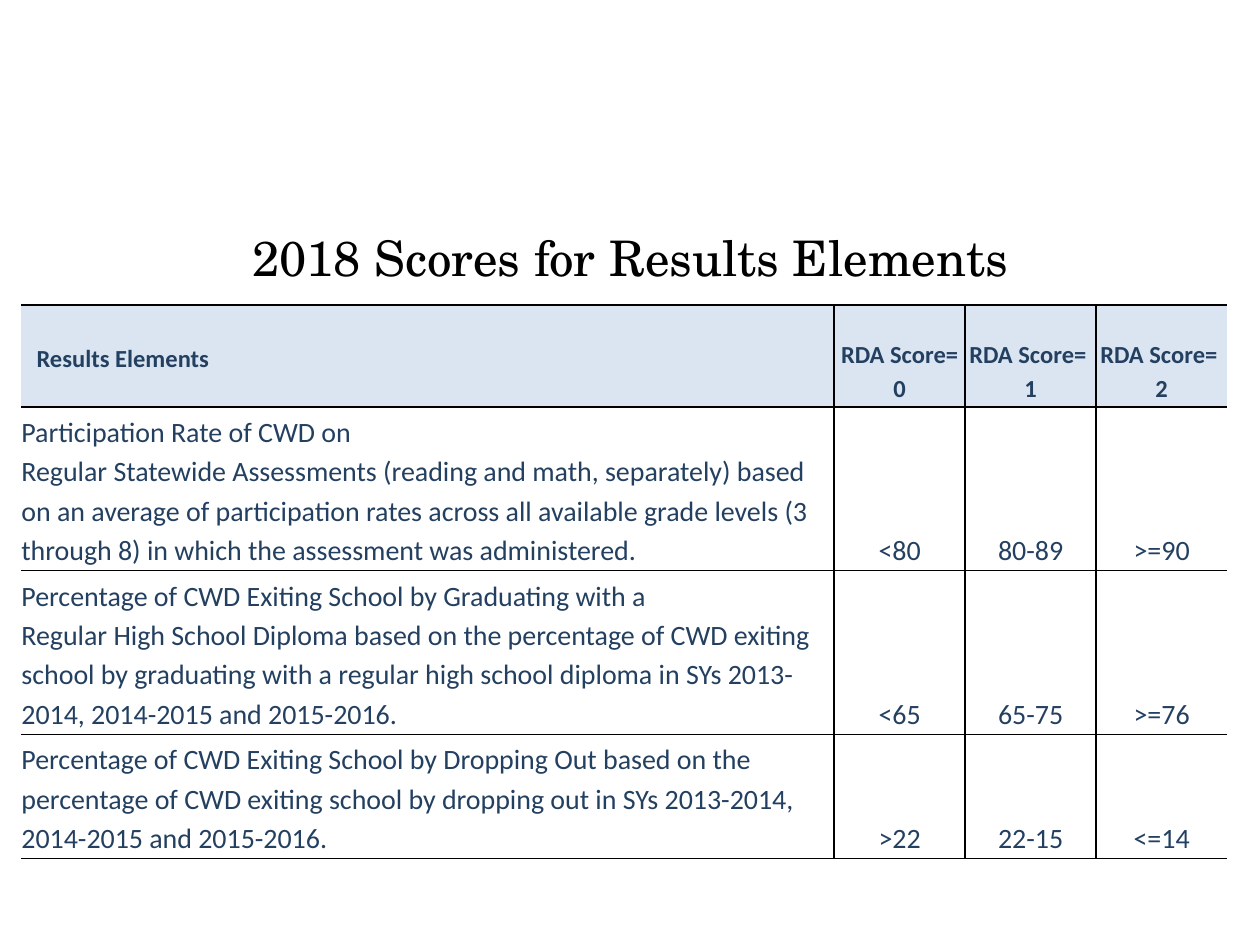
"""Build the slide of 2018 scores for results elements."""
import copy

import pptx
import pptx.dml.color
import pptx.enum.text
import pptx.oxml
import pptx.oxml.ns
import pptx.util

Inches = pptx.util.Inches
Pt = pptx.util.Pt
Align = pptx.enum.text.PP_ALIGN
Anchor = pptx.enum.text.MSO_ANCHOR
RGBColor = pptx.dml.color.RGBColor

BLACK = RGBColor(0x00, 0x00, 0x00)
NAVY = RGBColor(0x24, 0x40, 0x61)
PALE_BLUE = RGBColor(0xDB, 0xE5, 0xF1)

TITLE_FONT = {"name": "TeX Gyre Schola", "size": Pt(28)}
HEADER_FONT = {"name": "Calibri", "size": Pt(14), "bold": True}
BODY_FONT = {"name": "Calibri", "size": Pt(16), "bold": False}
CELL_FORMAT = {
    "margin_left": 0,
    "margin_right": 0,
    "margin_top": Inches(0.03),
    "margin_bottom": Inches(0.02),
}

COLUMN_WIDTHS = [6.45, 1.04, 1.04, 1.04]
ROW_HEIGHTS = [0.81, 1.07, 1.06, 0.81]
SCORES = [
    ["Results Elements", "RDA Score=\n0", "RDA Score= \n1", "RDA Score= \n2"],
    [
        "Participation Rate of CWD on \nRegular Statewide Assessments (reading and math, "
        "separately) based on an average of participation rates across all available "
        "grade levels (3 through 8) in which the assessment was administered.",
        "<80", "80-89", ">=90",
    ],
    [
        "Percentage of CWD Exiting School by Graduating with a \nRegular High School "
        "Diploma based on the percentage of CWD exiting school by graduating with a "
        "regular high school diploma in SYs 2013-2014, 2014-2015 and 2015-2016.",
        "<65", "65-75", ">=76",
    ],
    [
        "Percentage of CWD Exiting School by Dropping Out based on the percentage of CWD "
        "exiting school by dropping out in SYs 2013-2014, 2014-2015 and 2015-2016.",
        ">22", "22-15", "<=14",
    ],
]


def apply(target, values):
    """Set each named attribute on the target."""
    for name, value in values.items():
        setattr(target, name, value)


class ScorePage:
    """Hold the style and the current page."""

    def __init__(self, deck):
        self.page = deck.slides.add_slide(deck.slide_layouts[6])

    def text(self, paragraph, words, font, color, **layout):
        """Fill a paragraph with styled text."""
        paragraph.text = words
        apply(paragraph, layout)
        for span in paragraph.runs:
            apply(span.font, font)
            span.font.color.rgb = color
        style = paragraph.runs[0]._r.get_or_add_rPr()
        for line_break in paragraph._p.findall(pptx.oxml.ns.qn("a:br")):
            line_break.append(copy.deepcopy(style))

    def title(self, words, left, top, width, height):
        """Add the centred title."""
        box = self.page.shapes.add_textbox(*map(Inches, (left, top, width, height)))
        frame = box.text_frame
        apply(frame, {"word_wrap": True, "vertical_anchor": Anchor.MIDDLE})
        self.text(frame.paragraphs[0], words, TITLE_FONT, BLACK, alignment=Align.CENTER)

    def border(self, cell, side, visible):
        """Draw or hide one side of a cell."""
        fill = f'<a:solidFill><a:srgbClr val="{BLACK}"/></a:solidFill>' if visible else "<a:noFill/>"
        line = f'<a:ln{side} {pptx.oxml.ns.nsdecls("a")} w="{Pt(1)}">{fill}</a:ln{side}>'
        cell._tc.get_or_add_tcPr().append(pptx.oxml.parse_xml(line))

    def table(self, rows, left, top, widths, heights):
        """Add the score table."""
        frame = self.page.shapes.add_table(
            len(rows), len(widths), Inches(left), Inches(top),
            Inches(sum(widths)), Inches(sum(heights)),
        )
        table = frame.table
        apply(table, {"first_row": False, "horz_banding": False})
        for column, width in zip(table.columns, widths):
            column.width = Inches(width)
        for row, height in zip(table.rows, heights):
            row.height = Inches(height)
        for row_index, row in enumerate(rows):
            for column_index, words in enumerate(row):
                self.cell(table, row_index, column_index, words)

    def cell(self, table, row, column, words):
        """Format one table cell."""
        cell = table.cell(row, column)
        header, label = row == 0, column == 0
        apply(cell, CELL_FORMAT)
        cell.vertical_anchor = Anchor.MIDDLE if header and label else Anchor.BOTTOM
        if header and label:
            cell.margin_left = Inches(0.12)
        self.text(
            cell.text_frame.paragraphs[0], words, HEADER_FONT if header else BODY_FONT, NAVY,
            alignment=Align.LEFT if label else Align.CENTER, line_spacing=1.15,
        )
        last = column == len(table.columns) - 1
        for side, visible in {"L": not label, "R": not last, "T": True, "B": True}.items():
            self.border(cell, side, visible)
        if header:
            cell.fill.solid()
            cell.fill.fore_color.rgb = PALE_BLUE
        else:
            cell.fill.background()


def main():
    """Build and save the deck."""
    deck = pptx.Presentation()
    apply(deck, {"slide_width": Inches(10), "slide_height": Inches(7.5)})
    page = ScorePage(deck)
    page.table(SCORES, 0.17, 2.42, COLUMN_WIDTHS, ROW_HEIGHTS)
    page.title("2018 Scores for Results Elements", 0.5, 1.75, 9, 0.58)
    deck.save("out.pptx")


if __name__ == "__main__":
    main()
